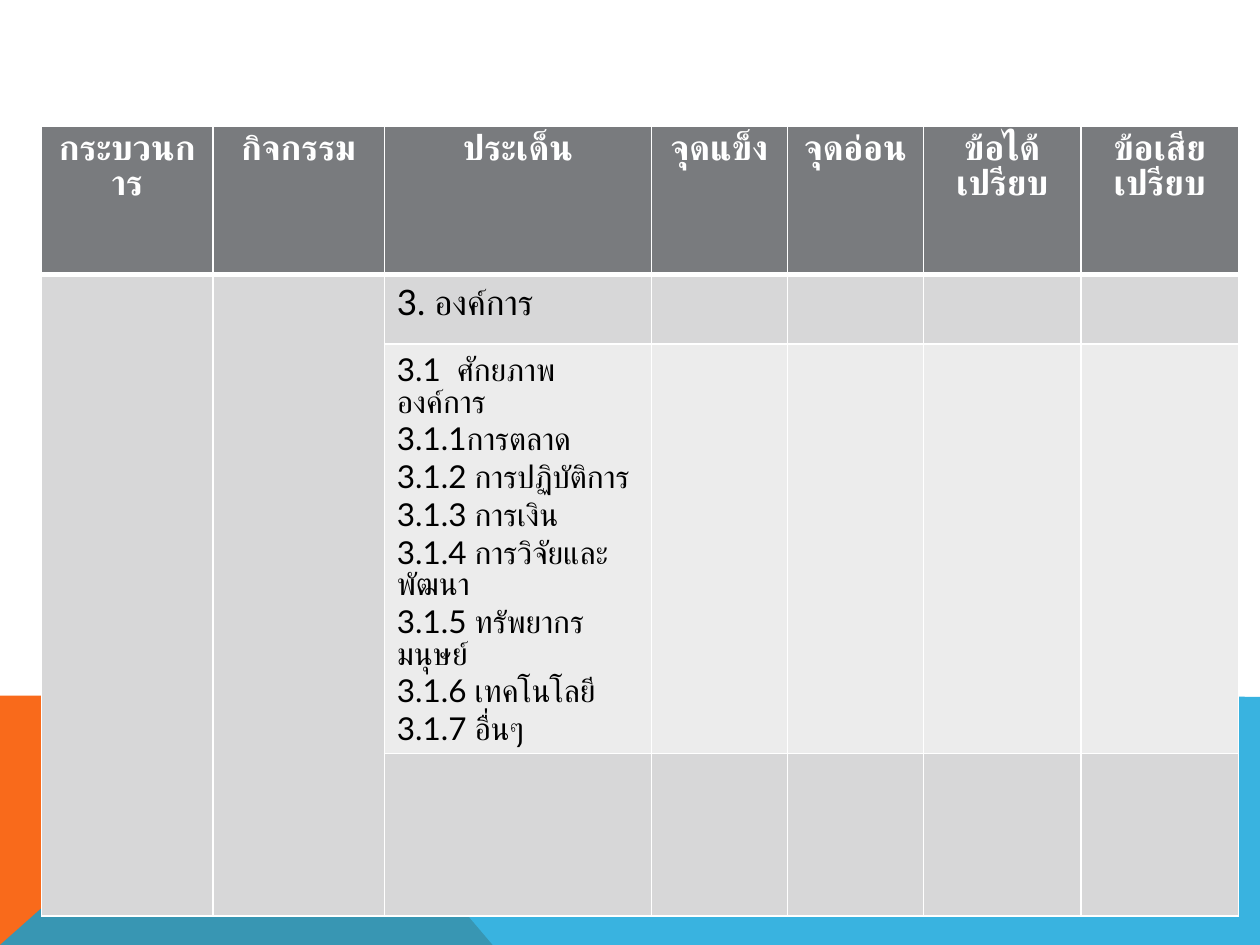
from lxml import etree
from pptx import Presentation
from pptx.dml.color import RGBColor
from pptx.enum.text import PP_ALIGN
from pptx.oxml.ns import qn
from pptx.util import Inches, Pt

CENTER, LEFT = PP_ALIGN.CENTER, PP_ALIGN.LEFT
BLANK_LAYOUT = 6

COLORS = {
    "orange": "F96A1B",
    "blue": "08A1D9",
    "header": "797B7E",
    "band_dark": "D7D7D8",
    "band_light": "ECECEC",
    "white": "FFFFFF",
    "black": "000000",
}
HEADINGS = ["กระบวนการ", "กิจกรรม", "ประเด็น", "จุดแข็ง", "จุดอ่อน",
            "ข้อได้เปรียบ", "ข้อเสียเปรียบ"]
TOPIC = "3. องค์การ"
ISSUES = ["3.1  ศักยภาพองค์การ", "3.1.1การตลาด", "3.1.2 การปฏิบัติการ",
          "3.1.3 การเงิน", "3.1.4 การวิจัยและพัฒนา",
          "3.1.5 ทรัพยากรมนุษย์", "3.1.6 เทคโนโลยี", "3.1.7 อื่นๆ"]
COLUMN_WIDTHS = [1.36, 1.36, 2.12, 1.08, 1.08, 1.25, 1.25]
ROW_HEIGHTS = [1.18, 0.55, 3.16, 1.29]
ROW_FILLS = ["header", "band_dark", "band_light", "band_dark"]
ISSUE_COLUMN = 2


class SlideBuilder:
    head_font = "Roboto"
    body_font = "Lato"

    def __init__(self, page):
        self.page = page

    def color(self, name):
        return RGBColor.from_string(COLORS[name])

    def polygon(self, points, fill, opacity=100):
        corners = [(Inches(x), Inches(y)) for x, y in points]
        builder = self.page.shapes.build_freeform(*corners[0])
        builder.add_line_segments(corners[1:], close=True)
        shape = builder.convert_to_shape()
        shape.shadow.inherit = False
        shape.fill.solid()
        shape.fill.fore_color.rgb = self.color(fill)
        shape.line.fill.background()
        if opacity < 100:
            tint = shape._element.spPr.find(qn("a:solidFill"))[0]
            etree.SubElement(tint, qn("a:alpha"), val=str(opacity * 1000))

    def table(self, left, top, widths, heights, fills):
        frame = self.page.shapes.add_table(
            len(heights), len(widths), Inches(left), Inches(top),
            Inches(sum(widths)), Inches(sum(heights)))
        grid = frame.table
        for column, width in zip(grid.columns, widths):
            column.width = Inches(width)
        for index, (row, height) in enumerate(zip(grid.rows, heights)):
            row.height = Inches(height)
            for cell in row.cells:
                cell.fill.solid()
                cell.fill.fore_color.rgb = self.color(fills[index])
                self.borders(cell, top=3 if index == 1 else 1,
                             bottom=3 if index == 0 else 1)
        return grid

    def borders(self, cell, top, bottom):
        properties = cell._tc.get_or_add_tcPr()
        sides = [("lnL", 1), ("lnR", 1), ("lnT", top), ("lnB", bottom)]
        for position, (side, points) in enumerate(sides):
            line = etree.Element(qn(f"a:{side}"), w=str(Pt(points)))
            fill = etree.SubElement(line, qn("a:solidFill"))
            etree.SubElement(fill, qn("a:srgbClr"), val=COLORS["white"])
            properties.insert(position, line)

    def cell_text(self, cell, lines, size, font, color, bold=False, align=LEFT):
        cell.text = "\n".join(lines)
        for para in cell.text_frame.paragraphs:
            para.alignment = align
            para.font.name = font
            para.font.size = Pt(size)
            para.font.bold = bold
            para.font.color.rgb = self.color(color)


def main():
    deck = Presentation()
    deck.slide_width, deck.slide_height = Inches(10), Inches(7.5)
    page = deck.slides.add_slide(deck.slide_layouts[BLANK_LAYOUT])
    slide = SlideBuilder(page)

    slide.polygon([(0, 7.5), (0, 5.52), (2.23, 5.52), (3.91, 7.5)], "orange")
    slide.polygon([(0, 7.5), (2.23, 5.52), (10, 5.53), (10, 7.5)],
                  "blue", opacity=80)

    grid = slide.table(0.33, 1, COLUMN_WIDTHS, ROW_HEIGHTS, ROW_FILLS)
    for column, heading in enumerate(HEADINGS):
        slide.cell_text(grid.cell(0, column), [heading], 20, slide.head_font,
                        "white", bold=True, align=CENTER)
    for column in range(ISSUE_COLUMN):
        grid.cell(1, column).merge(grid.cell(3, column))
    slide.cell_text(grid.cell(1, ISSUE_COLUMN), [TOPIC], 20,
                    slide.body_font, "black")
    slide.cell_text(grid.cell(2, ISSUE_COLUMN), ISSUES, 18,
                    slide.body_font, "black")

    deck.save("out.pptx")


if __name__ == "__main__":
    main()
